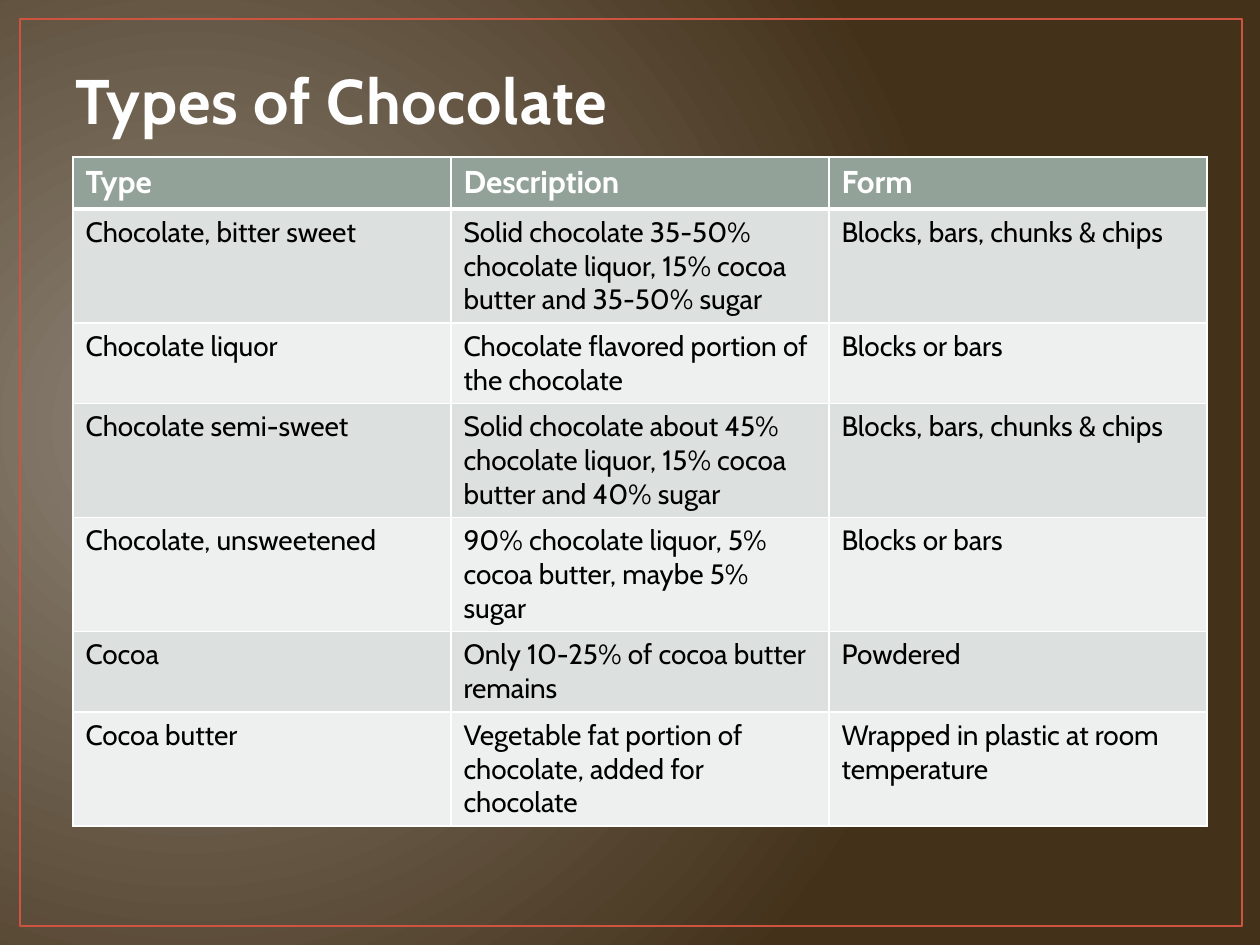
from lxml.etree import SubElement
from pptx import Presentation
from pptx.dml.color import RGBColor
from pptx.enum.shapes import MSO_SHAPE as Shape
from pptx.enum.text import MSO_ANCHOR as Anchor, PP_ALIGN as Align
from pptx.oxml import parse_xml
from pptx.oxml.ns import nsdecls, qn
from pptx.util import Pt

PX = 914400 // 126
FONT = "Cabin"

GLOW = RGBColor(0x8D, 0x83, 0x76)
BROWN = RGBColor(0x43, 0x31, 0x1A)
RED = RGBColor(0xCF, 0x54, 0x3F)
CREAM = RGBColor(0xFE, 0xFE, 0xFE)
EDGE = RGBColor(0x47, 0x53, 0x4C)
WHITE = RGBColor(0xFF, 0xFF, 0xFF)
BLACK = RGBColor(0, 0, 0)
SAGE = RGBColor(0x93, 0xA2, 0x99)
BANDS = RGBColor(0xDC, 0xE0, 0xDE), RGBColor(0xEE, 0xF0, 0xEF)

ROWS = [
    ("Type", "Description", "Form"),
    ("Chocolate, bitter sweet",
     "Solid chocolate 35-50% chocolate liquor, 15% cocoa butter and 35-50% sugar",
     "Blocks, bars, chunks & chips"),
    ("Chocolate liquor", "Chocolate flavored portion of the chocolate",
     "Blocks or bars"),
    ("Chocolate semi-sweet",
     "Solid chocolate about 45% chocolate liquor, 15% cocoa butter and 40% sugar",
     "Blocks, bars, chunks & chips"),
    ("Chocolate, unsweetened",
     "90% chocolate liquor, 5% cocoa butter, maybe 5% sugar",
     "Blocks or bars"),
    ("Cocoa", "Only 10-25% of cocoa butter remains", "Powdered"),
    ("Cocoa butter", "Vegetable fat portion of chocolate, added for chocolate",
     "Wrapped in plastic at room temperature"),
]


def scale(*box):
    return [n * PX for n in box]


def style(run, size, color, bold):
    font = run.font
    font.name, font.size, font.bold = FONT, Pt(size), bold
    font.color.rgb = color


def add_back(slide):
    fill = slide.background.fill
    fill.gradient()
    for stop, color, pos in zip(fill.gradient_stops, (GLOW, BROWN), (0, 1)):
        stop.color.rgb, stop.position = color, pos
    # Turn the linear gradient into a circular one
    grad = slide.element.find(".//" + qn("a:gradFill"))
    grad.remove(grad.find(qn("a:lin")))
    ring = SubElement(grad, qn("a:path"), path="circle")
    SubElement(ring, qn("a:fillToRect"), l="15000", t="50000", r="85000", b="60000")


def add_frame(slide, box):
    frame = slide.shapes.add_shape(Shape.RECTANGLE, *scale(*box))
    frame.shadow.inherit = False
    frame.fill.background()
    frame.line.color.rgb = RED
    frame.line.width = Pt(1.5)


def add_title(slide, box, text):
    title = slide.shapes.title
    title.left, title.top, title.width, title.height = scale(*box)
    frame = title.text_frame
    frame.text = text
    frame.vertical_anchor = Anchor.BOTTOM
    para = frame.paragraphs[0]
    para.alignment = Align.LEFT
    run = para.runs[0]
    style(run, 36, CREAM, True)
    # Letter spacing and thin outline
    props = run.font._element
    props.set("spc", "50")
    props.insert(0, parse_xml(
        f'<a:ln {nsdecls("a")} w="{Pt(1.05)}"><a:solidFill>'
        f'<a:srgbClr val="{EDGE}"/></a:solidFill></a:ln>'))


def add_edges(cell, low):
    props = cell._tc.get_or_add_tcPr()
    widths = {"L": 1, "R": 1, "T": 1, "B": low}
    for pos, (side, width) in enumerate(widths.items()):
        props.insert(pos, parse_xml(
            f'<a:ln{side} {nsdecls("a")} w="{Pt(width)}"><a:solidFill>'
            f'<a:srgbClr val="{WHITE}"/></a:solidFill></a:ln{side}>'))


def add_grid(slide, box, rows):
    grid = slide.shapes.add_table(len(rows), len(rows[0]), *scale(*box)).table
    for i, row in enumerate(rows):
        head = i == 0
        for j, text in enumerate(row):
            cell = grid.cell(i, j)
            cell.fill.solid()
            cell.fill.fore_color.rgb = SAGE if head else BANDS[(i - 1) % 2]
            cell.text_frame.text = text
            run = cell.text_frame.paragraphs[0].runs[0]
            style(run, 18 if head else 16, WHITE if head else BLACK, head)
            # The rule below the header is thicker, seen from both rows
            add_edges(cell, 3 if head else 1)
            if i == 1:
                cell._tc.tcPr.find(qn("a:lnT")).set("w", str(Pt(3)))


def main():
    deck = Presentation()
    deck.slide_width, deck.slide_height = scale(1260, 945)
    slide = deck.slides.add_slide(deck.slide_layouts[5])
    add_back(slide)
    add_frame(slide, (20, 19, 1222, 907))
    add_title(slide, (63, 42, 1134, 101), "Types of Chocolate")
    add_grid(slide, (73, 157, 1134, 364), ROWS)
    deck.save("out.pptx")


if __name__ == "__main__":
    main()
